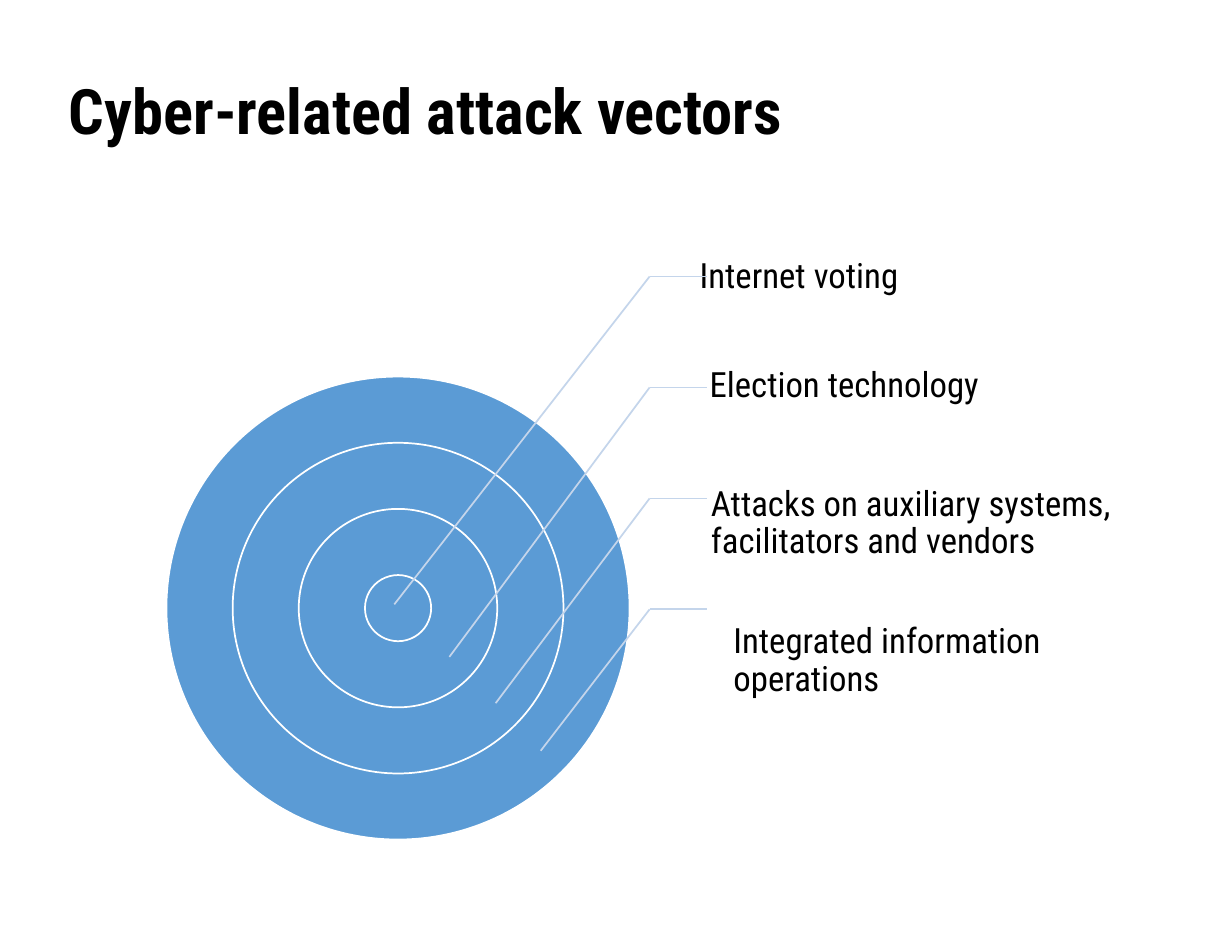
from dataclasses import dataclass

from pptx import Presentation
from pptx.dml.color import RGBColor
from pptx.enum.shapes import MSO_CONNECTOR as Connector, MSO_SHAPE as Shape
from pptx.enum.text import MSO_ANCHOR as Anchor, MSO_AUTO_SIZE as AutoSize, PP_ALIGN as Align
from pptx.oxml.ns import qn
from pptx.util import Cm, Inches, Pt
from lxml.etree import SubElement


@dataclass(frozen=True)
class Theme:
    """Colours, font and type sizes of the deck."""
    font: str = "Roboto Condensed"
    text: RGBColor = RGBColor(0x00, 0x00, 0x00)
    ring: RGBColor = RGBColor(0x5B, 0x9B, 0xD5)
    ring_edge: RGBColor = RGBColor(0xFF, 0xFF, 0xFF)
    leader: RGBColor = RGBColor(0xC4, 0xD5, 0xEB)
    title_size: int = 36
    label_size: int = 20
    line_width: float = 1


THEME = Theme()

CALLOUTS = [
    ("Internet voting", (4.1, 0, 3.71), (1.82, 3.06)),
    ("Election technology", (4.18, 0.87, 3.7), (2.26, 3.48)),
    ("Attacks on auxiliary systems, facilitators and vendors", (4.19, 1.97, 3.69), (2.63, 3.85)),
    ("Integrated information operations", (4.37, 3.07, 2.84), (2.99, 4.23)),
]


def write_text(box, text, size, spacing, insets, anchor, bold=False):
    """Fill a box with one left-aligned paragraph in the theme font."""
    frame = box.text_frame
    frame.word_wrap = True
    frame.auto_size = AutoSize.NONE
    frame.vertical_anchor = anchor
    frame.margin_left, frame.margin_top, frame.margin_right, frame.margin_bottom = map(Inches, insets)
    para = frame.paragraphs[0]
    para.alignment = Align.LEFT
    para.line_spacing = spacing
    para.space_before = Pt(0)
    span = para.add_run()
    span.text = text
    span.font.name = THEME.font
    span.font.size = Pt(size)
    span.font.bold = bold
    span.font.color.rgb = THEME.text


def add_leader(page, start, end):
    """Draw one straight leader segment."""
    leader = page.shapes.add_connector(Connector.STRAIGHT, *map(Inches, start + end))
    leader.line.color.rgb = THEME.leader
    leader.line.width = Pt(THEME.line_width)
    SubElement(leader._element.spPr, qn("a:effectLst"))


def add_title(page, left, top, width, height):
    """Place and format the slide title."""
    title = page.shapes.title
    title.left, title.top, title.width, title.height = map(Inches, (left, top, width, height))
    write_text(title, "Cyber-related attack vectors", THEME.title_size, 0.88,
               (0, 0.06, 0, 0), Anchor.TOP, bold=True)


def add_target(page, left, top, size):
    """Draw concentric rings whose diameters are odd parts of the full size."""
    for parts in (7, 5, 3, 1):
        diameter = size * parts / 7
        offset = (size - diameter) / 2
        ring = page.shapes.add_shape(Shape.OVAL, Inches(left + offset), Inches(top + offset),
                                     Inches(diameter), Inches(diameter))
        ring.shadow.inherit = False
        ring.fill.solid()
        ring.fill.fore_color.rgb = THEME.ring
        ring.line.color.rgb = THEME.ring_edge
        ring.line.width = Pt(THEME.line_width)


def add_callouts(page, left, top):
    """Label each ring with a bent leader, from the centre outwards."""
    elbow_x, end_x = left + 3.86, left + 4.32
    level_gap = 2.66 / (len(CALLOUTS) - 1)
    for index, (text, (label_x, label_y, width), (tip_x, tip_y)) in enumerate(CALLOUTS):
        label = page.shapes.add_textbox(Inches(left + label_x), Inches(top + label_y),
                                        Inches(width), Inches(0.89))
        write_text(label, text, THEME.label_size, 0.9, (0.16, 0.03, 0.03, 0.03), Anchor.MIDDLE)
        level = top + 0.44 + level_gap * index
        add_leader(page, (elbow_x, level), (end_x, level))
        add_leader(page, (elbow_x, level), (left + tip_x, top + tip_y))


def main():
    """Build and save the deck."""
    deck = Presentation()
    deck.slide_width, deck.slide_height = Cm(25), Cm(19)
    page = deck.slides.add_slide(deck.slide_layouts[5])
    add_title(page, 0.55, 0.59, 8.66, 1.18)
    add_target(page, 1.33, 3.01, 3.7)
    add_callouts(page, 1.33, 1.77)
    deck.save("out.pptx")


if __name__ == "__main__":
    main()
